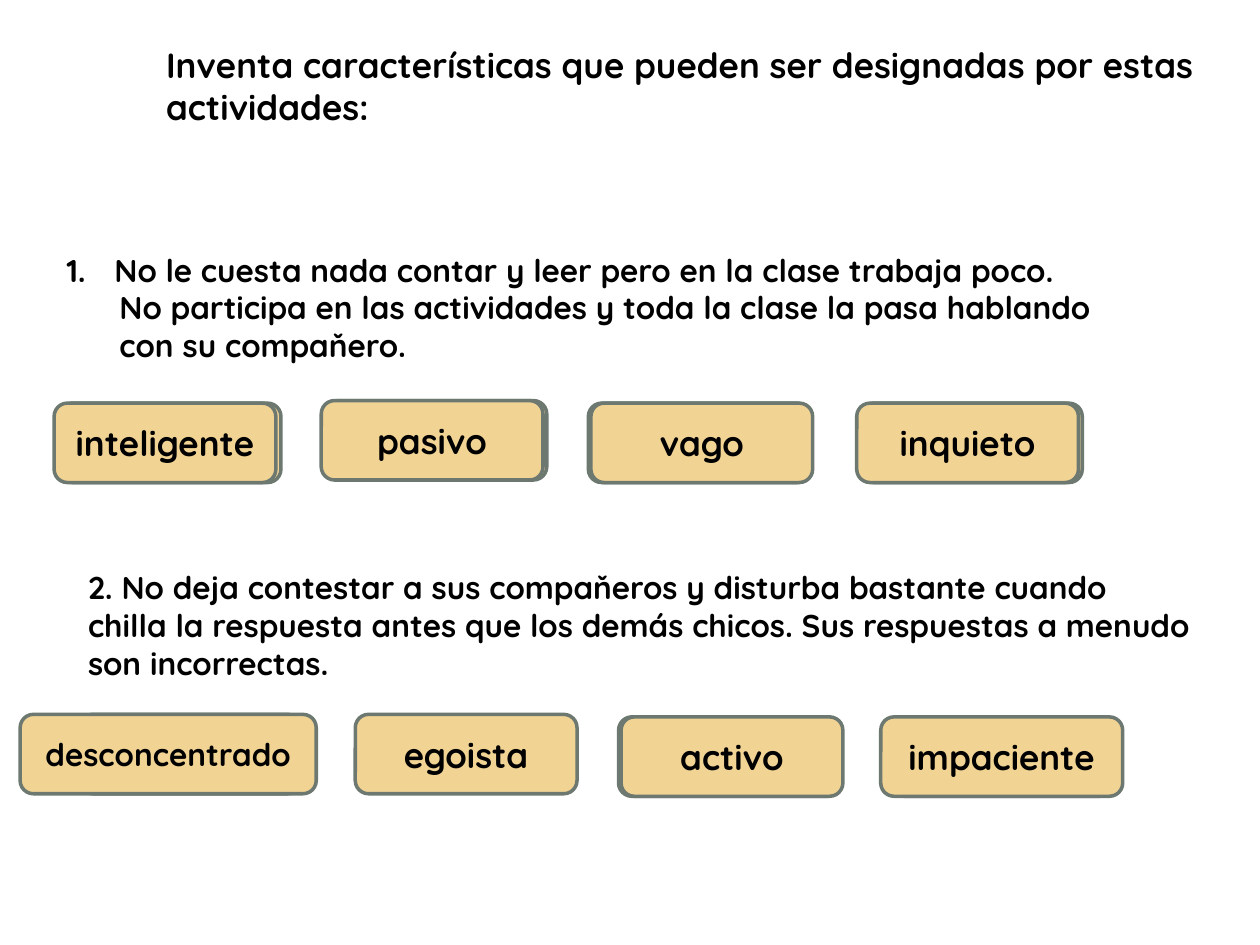
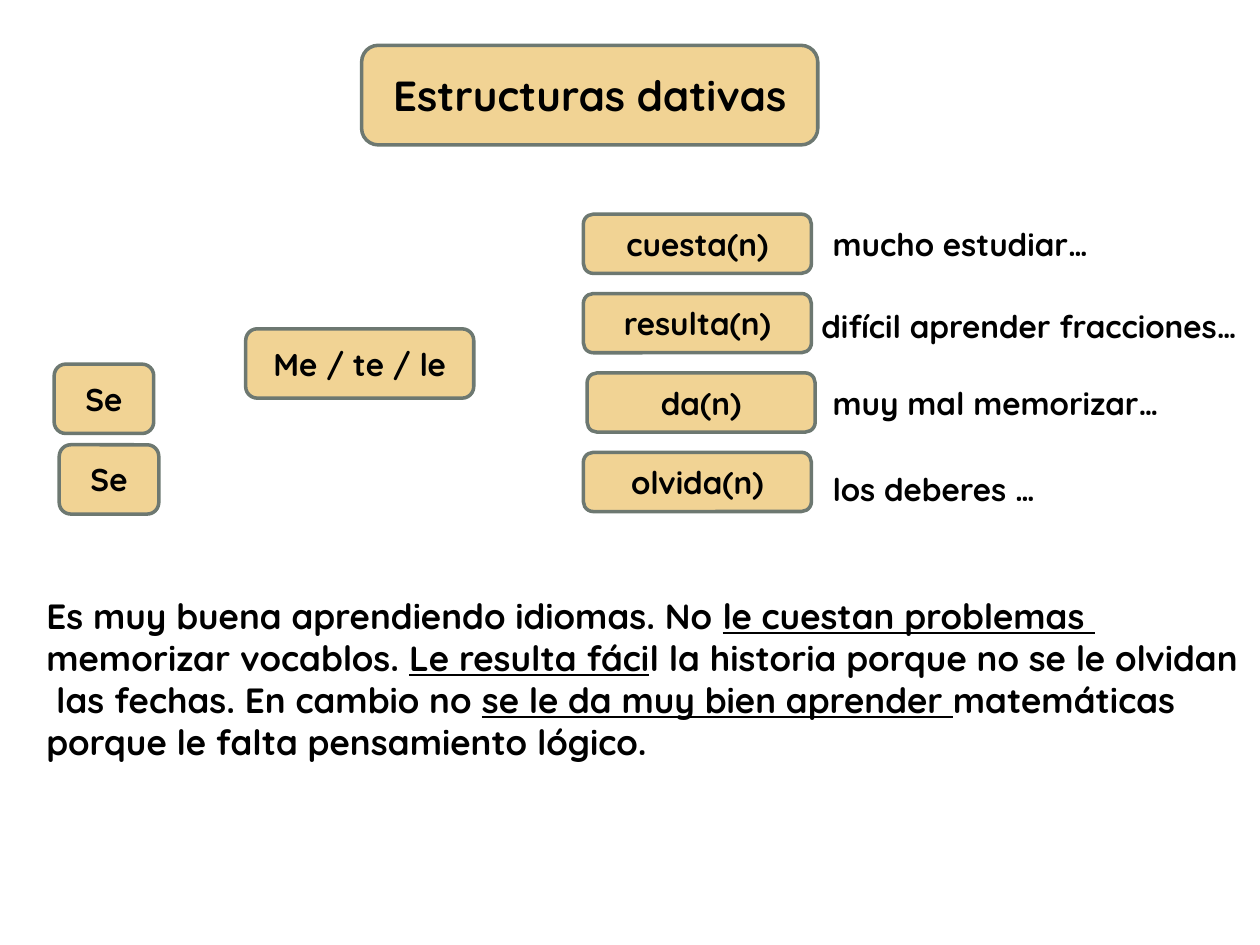
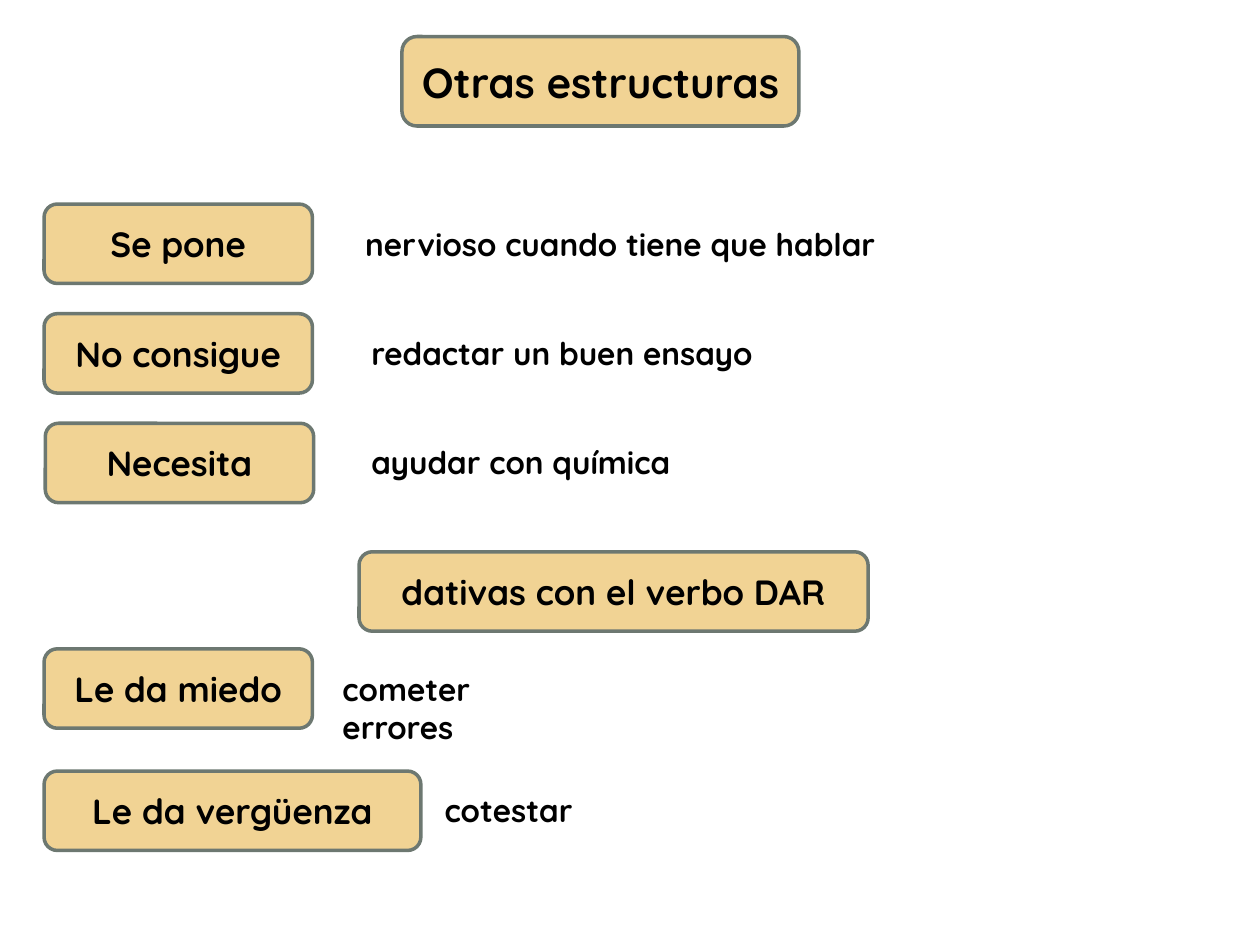
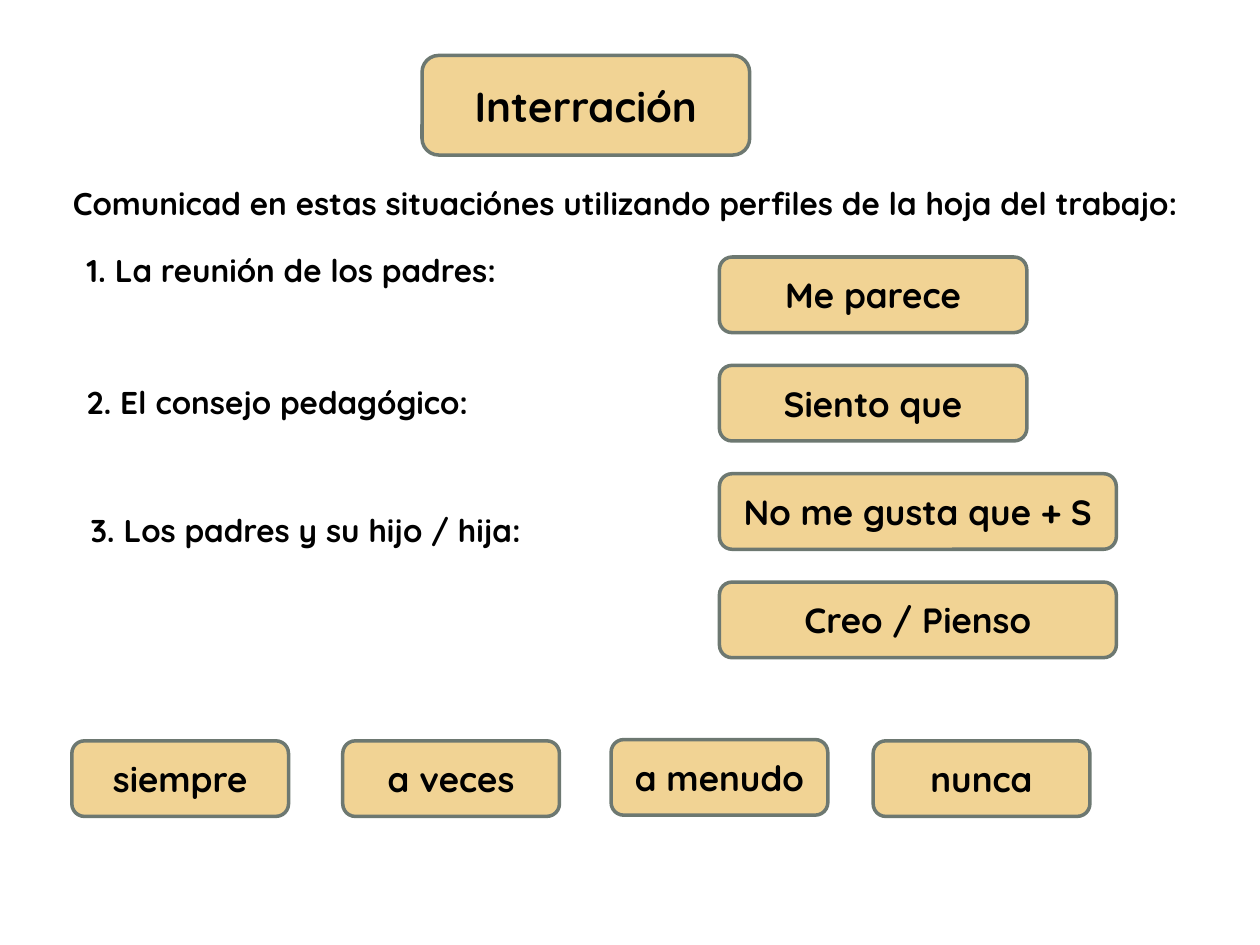
from typing import NamedTuple

from lxml.etree import SubElement
from pptx import Presentation
from pptx.dml.color import RGBColor
from pptx.enum.shapes import MSO_SHAPE as Form
from pptx.enum.text import MSO_ANCHOR as Anchor, MSO_AUTO_SIZE as Fit, PP_ALIGN as Align
from pptx.oxml.ns import qn
from pptx.util import Inches, Pt

WHITE = RGBColor(0xFF, 0xFF, 0xFF)
BLACK = RGBColor(0x00, 0x00, 0x00)
SAND = RGBColor(0xF1, 0xD3, 0x94)
SLATE = RGBColor(0x6D, 0x78, 0x71)
FACE = "Quicksand"
FONT = {"name": FACE, "bold": True}
HEAD, BIG, BODY = 24, 20, 18


class Area(NamedTuple):
    left: float
    top: float
    width: float
    height: float


class Tag(NamedTuple):
    """A sand-coloured rounded label."""
    area: Area
    text: str = ""
    size: int = BIG


class Span(NamedTuple):
    text: str
    under: bool = False


class Line(NamedTuple):
    spans: list[Span]
    indent: float = 0
    number: bool = False


class Note(NamedTuple):
    """Free text beside or between the labels."""
    area: Area
    lines: list[Line]
    size: int = BODY
    wrap: bool = False


def plain(*texts: str) -> list[Line]:
    return [Line([Span(text)]) for text in texts]


def short(left: float, top: float, width: float, text: str, wrap: bool = False) -> Note:
    """A note of one body-size paragraph."""
    return Note(Area(left, top, width, 0.4), plain(text), wrap=wrap)


def add_run(para, text: str, size: int, under: bool = False) -> None:
    run = para.add_run()
    run.text = text
    style = FONT | {"size": Pt(size)}
    if under:
        style["underline"] = True
    for key, value in style.items():
        setattr(run.font, key, value)
    run.font.color.rgb = BLACK


def add_round(slide, area: Area, fill: RGBColor):
    shape = slide.shapes.add_shape(Form.ROUNDED_RECTANGLE, *map(Inches, area))
    shape.shadow.inherit = False
    shape.fill.solid()
    shape.fill.fore_color.rgb = fill
    return shape


def draw_panel(slide) -> None:
    panel = add_round(slide, Area(0.1, 0.11, 9.8, 7.29), WHITE)
    panel.adjustments[0] = 0.017
    panel.line.fill.background()


def draw_tag(slide, tag: Tag) -> None:
    shape = add_round(slide, tag.area, SAND)
    shape.line.color.rgb = SLATE
    shape.line.width = Pt(2)
    if tag.text:
        shape.text_frame.vertical_anchor = Anchor.MIDDLE
        para = shape.text_frame.paragraphs[0]
        para.alignment = Align.CENTER
        add_run(para, tag.text, tag.size)


def set_indent(para, line: Line) -> None:
    """Indent a paragraph, hanging its number if it has one."""
    props = para._p.get_or_add_pPr()
    props.set("marL", str(Inches(line.indent)))
    if line.number:
        props.set("indent", str(-Inches(line.indent)))
        SubElement(props, qn("a:buFont"), typeface=FACE)
        SubElement(props, qn("a:buAutoNum"), type="arabicPeriod")


def draw_note(slide, note: Note) -> None:
    frame = slide.shapes.add_textbox(*map(Inches, note.area)).text_frame
    for key, value in {"word_wrap": note.wrap, "auto_size": Fit.SHAPE_TO_FIT_TEXT}.items():
        setattr(frame, key, value)
    for i, line in enumerate(note.lines):
        para = frame.add_paragraph() if i else frame.paragraphs[0]
        if line.indent:
            set_indent(para, line)
        for span in line.spans:
            add_run(para, span.text, note.size, span.under)


def traits() -> list[Tag | Note]:
    wide, high = 1.76, 0.63
    backs = [(0.47, 3.2), (2.58, 3.18), (4.67, 3.2), (6.83, 3.2),
             (0.63, 5.67), (4.91, 5.69), (7.07, 5.69)]
    fronts = [(0.43, 3.2, "inteligente"), (2.55, 3.18, "pasivo"),
              (4.69, 3.2, "vago"), (6.8, 3.2, "inquieto"),
              (2.82, 5.67, "egoista"), (4.93, 5.69, "activo")]
    first = "No le cuesta nada contar y leer pero en la clase trabaja poco."
    rest = ["No participa en las actividades y toda la clase la pasa hablando",
            "con su compaňero."]
    return [
        Note(Area(1.22, 0.3, 8.5, 0.77), plain(
            "Inventa características que pueden ser designadas por estas",
            "actividades:"), BIG),
        Note(Area(0.43, 1.94, 8.64, 1.01),
             [Line([Span(first)], 0.38, True)]
             + [Line([Span(text)], 0.42) for text in rest]),
        Note(Area(0.6, 4.46, 9.12, 1.01), plain(
            "2. No deja contestar a sus compaňeros y disturba bastante cuando",
            "chilla la respuesta antes que los demás chicos. Sus respuestas a menudo",
            "son incorrectas.")),
        *[Tag(Area(left, top, wide, high)) for left, top in backs],
        *[Tag(Area(left, top, wide, high), text) for left, top, text in fronts],
        Tag(Area(0.16, 5.67, 2.35, high), "desconcentrado", BODY),
        Tag(Area(6.99, 5.69, 1.92, high), "impaciente"),
    ]


def datives() -> list[Tag | Note]:
    verbs = [(4.63, "cuesta(n)"), (4.63, "resulta(n)"), (4.66, "da(n)"), (4.63, "olvida(n)")]
    story = [
        Line([Span("Es muy buena aprendiendo idiomas. No "),
              Span("le cuestan problemas ", True)]),
        Line([Span("memorizar vocablos. "), Span("Le resulta fáci", True),
              Span("l la historia porque no se le olvidan")]),
        Line([Span(" las fechas. En cambio no "),
              Span("se le da muy bien aprender ", True), Span("matemáticas")]),
        *plain("porque le falta pensamiento lógico."),
    ]
    return [
        Tag(Area(2.87, 0.36, 3.62, 0.79), "Estructuras dativas", HEAD),
        Tag(Area(1.95, 2.61, 1.81, 0.55), "Me / te / le", BODY),
        *[Tag(Area(left, 1.7 + 0.63 * i, 1.81, 0.47), text, BODY)
          for i, (left, text) in enumerate(verbs)],
        *[Tag(Area(left, top, 0.79, 0.55), "Se", BODY)
          for left, top in [(0.43, 2.89), (0.47, 3.53)]],
        short(6.51, 1.74, 2.36, "mucho estudiar…"),
        short(6.42, 2.39, 3.66, "difícil aprender fracciones…"),
        short(6.51, 3, 2.89, "muy mal memorizar…"),
        short(6.51, 3.68, 1.94, "los deberes …"),
        Note(Area(0.27, 4.67, 9.73, 1.45), story, BIG),
    ]


def others() -> list[Tag | Note]:
    high = 0.63
    starts = [(0.35, "Se pone"), (0.35, "No consigue"), (0.36, "Necesita")]
    return [
        Tag(Area(3.19, 0.29, 3.15, 0.71), "Otras estructuras", HEAD),
        *[Tag(Area(left, 1.62 + 0.87 * i, 2.13, high), text)
          for i, (left, text) in enumerate(starts)],
        Tag(Area(0.35, 5.15, 2.13, high), "Le da miedo"),
        Tag(Area(0.35, 6.12, 2.99, high), "Le da vergüenza"),
        short(2.8, 1.74, 4.35, "nervioso cuando tiene que hablar"),
        short(2.85, 2.6, 3.37, "redactar un buen ensayo"),
        short(2.85, 3.47, 2.7, "ayudar con química"),
        Tag(Area(2.85, 4.38, 4.04, high), "dativas con el verbo DAR"),
        short(2.62, 5.27, 2.1, "cometer errores", wrap=True),
        short(3.43, 6.23, 1.34, "cotestar", wrap=True),
    ]


def talks() -> list[Tag | Note]:
    high = 0.6
    views = [(2.44, "Me parece"), (2.44, "Siento que"),
             (3.15, "No me gusta que + S"), (3.15, "Creo / Pienso")]
    times = [(0.57, 5.88, "siempre"), (2.72, 5.88, "a veces"),
             (4.85, 5.87, "a menudo"), (6.93, 5.88, "nunca")]
    return [
        Tag(Area(3.35, 0.44, 2.6, 0.79), "Interración", HEAD),
        short(0.59, 1.94, 3.54, "1. La reunión de los padres:"),
        short(0.59, 2.99, 3.4, "2. El consejo pedagógico:"),
        short(0.62, 4.01, 3.62, "3. Los padres y su hijo / hija:"),
        *[Tag(Area(5.71, 2.04 + 0.86 * i, wide, high), text)
          for i, (wide, text) in enumerate(views)],
        *[Tag(Area(left, top, 1.72, high), text) for left, top, text in times],
        short(0.48, 1.41, 9.08,
              "Comunicad en estas situaciónes utilizando perfiles de la hoja del trabajo:"),
    ]


def main() -> None:
    deck = Presentation()
    deck.slide_width, deck.slide_height = Inches(10), Inches(7.5)
    for items in (traits(), datives(), others(), talks()):
        slide = deck.slides.add_slide(deck.slide_layouts[6])
        draw_panel(slide)
        for item in items:
            if isinstance(item, Tag):
                draw_tag(slide, item)
            else:
                draw_note(slide, item)
    deck.save("out.pptx")


if __name__ == "__main__":
    main()
